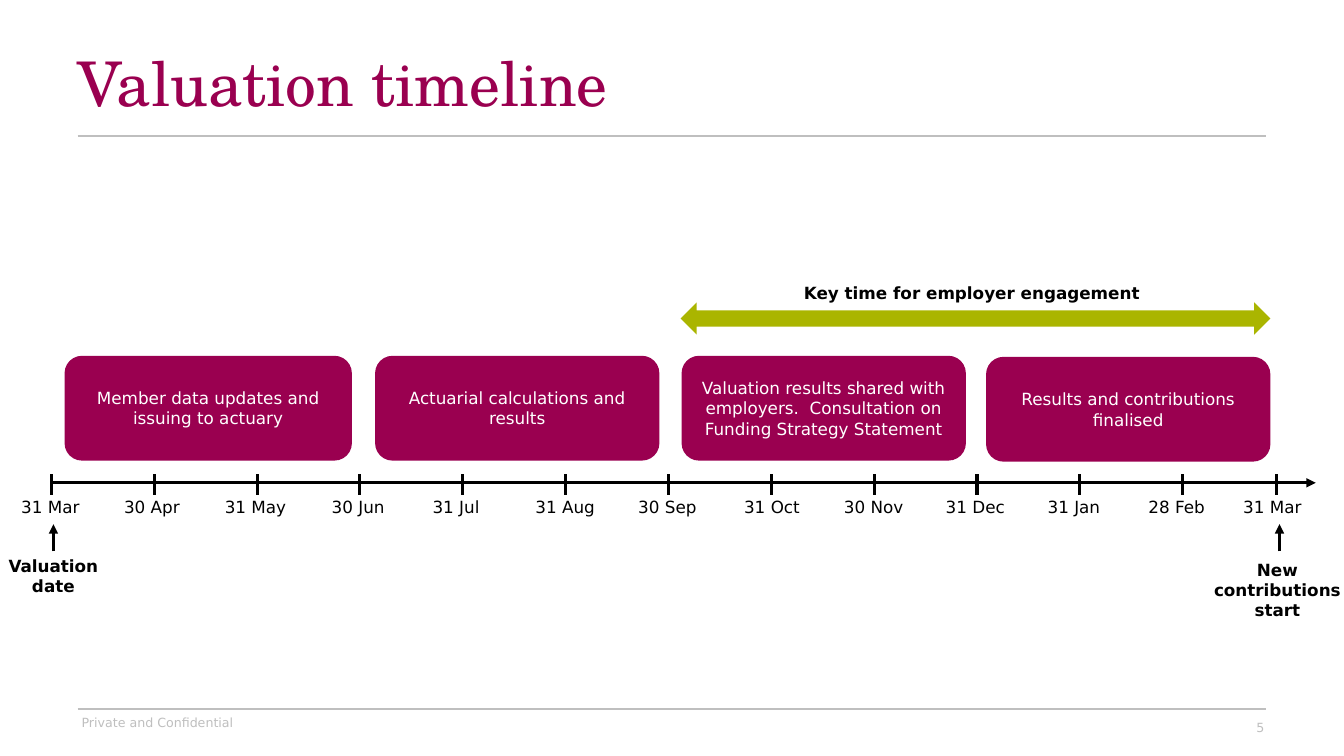
from dataclasses import dataclass
from lxml.etree import SubElement
from pptx import Presentation
from pptx.dml.color import RGBColor
from pptx.enum.shapes import MSO_CONNECTOR, MSO_SHAPE
from pptx.enum.text import MSO_ANCHOR, PP_ALIGN
from pptx.oxml.ns import qn
from pptx.util import Inches, Pt


@dataclass(frozen=True)
class Theme:
    """Colours, fonts and sizes of the slide."""
    plum: str = "9A0050"
    lime: str = "AAB500"
    grey: str = "BFBFBF"
    black: str = "000000"
    white: str = "FFFFFF"
    heading: str = "TeX Gyre Schola"
    body: str = "DejaVu Sans"
    title_size: int = 44
    body_size: int = 12
    small_size: int = 9
    rule_width: float = 1.5
    axis_width: float = 2.25


class Timeline:
    """Draws timeline elements on one slide in one style."""

    def __init__(self, s, theme):
        self.s = s
        self.theme = theme

    def add_run(self, tf, text, size, color, font=None, bold=False, align=PP_ALIGN.LEFT):
        tf.word_wrap = True
        p = tf.paragraphs[0]
        p.alignment = align
        r = p.add_run()
        r.text = text
        r.font.name = font or self.theme.body
        r.font.size = Pt(size)
        r.font.bold = bold
        r.font.color.rgb = RGBColor.from_string(color)
        return p

    def text(self, box, text, size=None, color=None, **style):
        tf = self.s.shapes.add_textbox(*map(Inches, box)).text_frame
        tf.margin_left = tf.margin_right = tf.margin_top = tf.margin_bottom = 0
        return self.add_run(tf, text, size or self.theme.body_size,
                            color or self.theme.black, **style)

    def caption(self, box, text):
        self.text(box, text, bold=True, align=PP_ALIGN.CENTER)

    def line(self, x1, y1, x2, y2, color=None, width=None, arrow=False):
        c = self.s.shapes.add_connector(MSO_CONNECTOR.STRAIGHT,
                                        *map(Inches, (x1, y1, x2, y2)))
        c.line.color.rgb = RGBColor.from_string(color or self.theme.black)
        c.line.width = Pt(width or self.theme.axis_width)
        if arrow:
            ln = c._element.spPr.find(qn("a:ln"))
            SubElement(ln, qn("a:tailEnd"), type="triangle")
        SubElement(c._element.spPr, qn("a:effectLst"))

    def rule(self, y):
        self.line(0.77, y, 12.56, y, self.theme.grey, self.theme.rule_width)

    def shape(self, kind, box, color):
        sp = self.s.shapes.add_shape(kind, *map(Inches, box))
        sp.shadow.inherit = False
        sp.fill.solid()
        sp.fill.fore_color.rgb = RGBColor.from_string(color)
        sp.line.fill.background()
        return sp

    def stage(self, box, text):
        tf = self.shape(MSO_SHAPE.ROUNDED_RECTANGLE, box, self.theme.plum).text_frame
        tf.vertical_anchor = MSO_ANCHOR.MIDDLE
        self.add_run(tf, text, self.theme.body_size, self.theme.white,
                     align=PP_ALIGN.CENTER)

    def month(self, tick_x, label_x, text):
        self.line(tick_x, 4.91, tick_x, 4.7)
        self.text((label_x, 4.93, 0.75, 0.2), text)


MONTHS = [("31 Mar", 0.21), ("30 Apr", 1.23), ("31 May", 2.23), ("30 Jun", 3.29),
          ("31 Jul", 4.29), ("31 Aug", 5.31), ("30 Sep", 6.33), ("31 Oct", 7.38),
          ("30 Nov", 8.37), ("31 Dec", 9.38), ("31 Jan", 10.39), ("28 Feb", 11.39)]

STAGES = [((0.64, 3.53, 2.85, 1.04), "Member data updates and issuing to actuary"),
          ((3.72, 3.53, 2.82, 1.04), "Actuarial calculations and results"),
          ((6.76, 3.53, 2.82, 1.04), "Valuation results shared with employers.  "
           "Consultation on Funding Strategy Statement"),
          ((9.78, 3.54, 2.82, 1.04), "Results and contributions finalised")]


def main():
    prs = Presentation()
    prs.slide_width, prs.slide_height = Inches(13.33), Inches(7.5)
    theme = Theme()
    t = Timeline(prs.slides.add_slide(prs.slide_layouts[6]), theme)

    p = t.text((0.77, 0.53, 9.7, 0.77), "Valuation timeline", theme.title_size,
               theme.plum, font=theme.heading)
    p.line_spacing = 0.9
    t.rule(1.35)

    t.caption((7.09, 2.81, 5.1, 0.2), "Key time for employer engagement")
    t.shape(MSO_SHAPE.LEFT_RIGHT_ARROW, (6.75, 3, 5.85, 0.32), theme.lime)
    for box, text in STAGES:
        t.stage(box, text)

    t.line(0.51, 4.79, 13.05, 4.79, arrow=True)
    for i, (text, label_x) in enumerate(MONTHS):
        t.month(0.51 + 1.02 * i, label_x, text)
    t.month(12.66, 12.33, "31 Mar")

    for x in (0.53, 12.69):
        t.line(x, 5.47, x, 5.2, arrow=True)
    t.caption((0.03, 5.51, 1, 0.4), "Valuation date")
    t.caption((12.02, 5.55, 1.3, 0.61), "New contributions start")

    t.rule(7.03)
    t.text((0.81, 7.09, 2.2, 0.15), "Private and Confidential",
           theme.small_size, theme.grey)
    t.text((9.74, 7.14, 2.8, 0.15), "5", theme.small_size, theme.grey,
           align=PP_ALIGN.RIGHT)
    prs.save("out.pptx")


if __name__ == "__main__":
    main()
